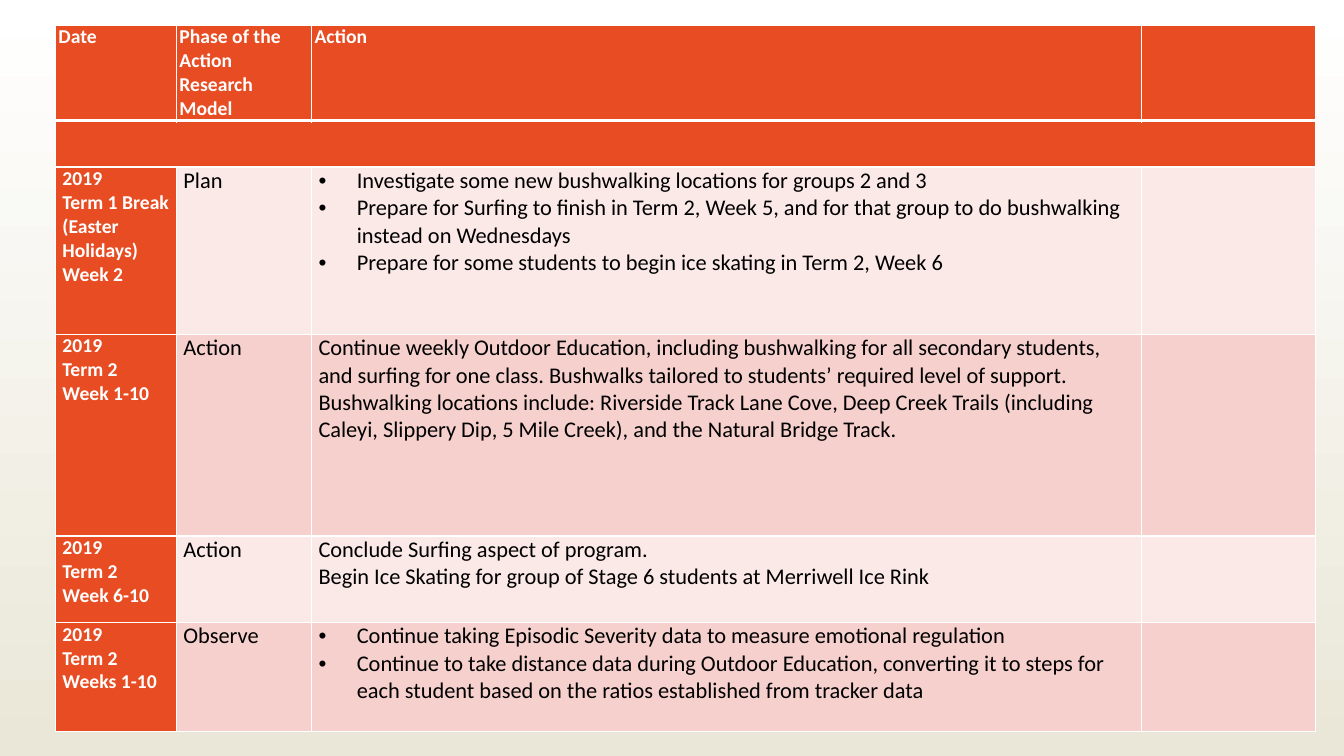
from lxml.etree import SubElement
from pptx import Presentation
from pptx.dml.color import RGBColor
from pptx.oxml.ns import qn
from pptx.util import Inches, Pt

COLORS = {
    "orange": "E84C22", "light": "FBE9E8", "rose": "F6D0CD",
    "white": "FFFFFF", "sand": "EAE7D8", "black": "000000",
}
LABEL = {"size": Pt(14), "bold": True, "name": "Calibri"}
BODY = {"size": Pt(16), "bold": False, "name": "Calibri"}

COLUMN_WIDTHS = [1.2, 1.34, 8.23, 1.73]
ROW_HEIGHTS = [0.94, 0.46, 1.66, 2, 0.86, 1.08]
HEADINGS = ["Date", "Phase of the Action Research Model", "Action"]
# Date lines, phase, action lines, whether the actions are bulleted
STEPS = [
    (["2019", "Term 1 Break (Easter Holidays)", "Week 2"], "Plan", [
        "Investigate some new bushwalking locations for groups 2 and 3",
        "Prepare for Surfing to finish in Term 2, Week 5, and for that group "
        "to do bushwalking instead on Wednesdays",
        "Prepare for some students to begin ice skating in Term 2, Week 6",
    ], True),
    (["2019", "Term 2", "Week 1-10"], "Action", [
        "Continue weekly Outdoor Education, including bushwalking for all "
        "secondary students, and surfing for one class. Bushwalks tailored "
        "to students’ required level of support.",
        "Bushwalking locations include: Riverside Track Lane Cove, Deep Creek "
        "Trails (including Caleyi, Slippery Dip, 5 Mile Creek), and the "
        "Natural Bridge Track.",
    ], False),
    (["2019", "Term 2", "Week 6-10"], "Action", [
        "Conclude Surfing aspect of program.",
        "Begin Ice Skating for group of Stage 6 students at Merriwell Ice Rink",
    ], False),
    (["2019", "Term 2", "Weeks 1-10"], "Observe", [
        "Continue taking Episodic Severity data to measure emotional regulation",
        "Continue to take distance data during Outdoor Education, converting "
        "it to steps for each student based on the ratios established from "
        "tracker data",
    ], True),
]


def rgb(color):
    return RGBColor.from_string(COLORS[color])


class PlanPage:
    """Holds the page and the style of its elements."""

    def __init__(self, page):
        self.page = page

    def background(self, top, bottom):
        fill = self.page.background.fill
        fill.gradient()
        fill.gradient_angle = 270
        for stop, color in zip(fill.gradient_stops, (top, bottom)):
            stop.color.rgb = rgb(color)

    def table(self, left, top, widths, heights):
        frame = self.page.shapes.add_table(
            len(heights), len(widths), Inches(left), Inches(top),
            Inches(sum(widths)), Inches(sum(heights)))
        table = frame.table
        for column, width in zip(table.columns, widths):
            column.width = Inches(width)
        for row, height in zip(table.rows, heights):
            row.height = Inches(height)
        return table

    def cell(self, cell, fill, top=1, bottom=1):
        """Fill a cell and draw its borders; top and bottom are in points."""
        properties = cell._tc.get_or_add_tcPr()
        for side, width in {"L": 1, "R": 1, "T": top, "B": bottom}.items():
            line = SubElement(properties, qn(f"a:ln{side}"), w=str(Pt(width)))
            solid = SubElement(line, qn("a:solidFill"))
            SubElement(solid, qn("a:srgbClr"), val=COLORS["white"])
        cell.fill.solid()
        cell.fill.fore_color.rgb = rgb(fill)

    def text(self, cell, lines, style, color, side=0.07, bulleted=False):
        margins = {"margin_left": side, "margin_right": side,
                   "margin_top": 0, "margin_bottom": 0}
        for name, value in margins.items():
            setattr(cell, name, Inches(value))
        for index, line in enumerate(lines):
            box = cell.text_frame
            para = box.add_paragraph() if index else box.paragraphs[0]
            span = para.add_run()
            span.text = line
            for name, value in style.items():
                setattr(span.font, name, value)
            span.font.color.rgb = rgb(color)
            if bulleted:
                self.bullet(para)

    def bullet(self, para):
        properties = para._p.get_or_add_pPr()
        properties.set("marL", str(Inches(0.38)))
        properties.set("indent", str(Inches(-0.38)))
        SubElement(properties, qn("a:buFont"), typeface="Arial")
        SubElement(properties, qn("a:buChar"), char="•")


def main():
    deck = Presentation()
    deck.slide_width, deck.slide_height = Inches(13.33), Inches(7.5)
    plan = PlanPage(deck.slides.add_slide(deck.slide_layouts[6]))
    plan.background("white", "sand")
    table = plan.table(0.55, 0.25, COLUMN_WIDTHS, ROW_HEIGHTS)

    for column in range(len(COLUMN_WIDTHS)):
        plan.cell(table.cell(0, column), "orange", bottom=3)
        plan.cell(table.cell(1, column), "orange", top=3)
    table.cell(1, 0).merge(table.cell(1, len(COLUMN_WIDTHS) - 1))
    for column, heading in enumerate(HEADINGS):
        plan.text(table.cell(0, column), [heading], LABEL, "white", side=0.03)

    for row, (dates, phase, actions, bulleted) in enumerate(STEPS, start=2):
        band = "rose" if row % 2 else "light"
        for column in range(len(COLUMN_WIDTHS)):
            plan.cell(table.cell(row, column), band if column else "orange")
        plan.text(table.cell(row, 0), dates, LABEL, "white")
        plan.text(table.cell(row, 1), [phase], BODY, "black")
        plan.text(table.cell(row, 2), actions, BODY, "black", bulleted=bulleted)

    deck.save("out.pptx")


if __name__ == "__main__":
    main()
